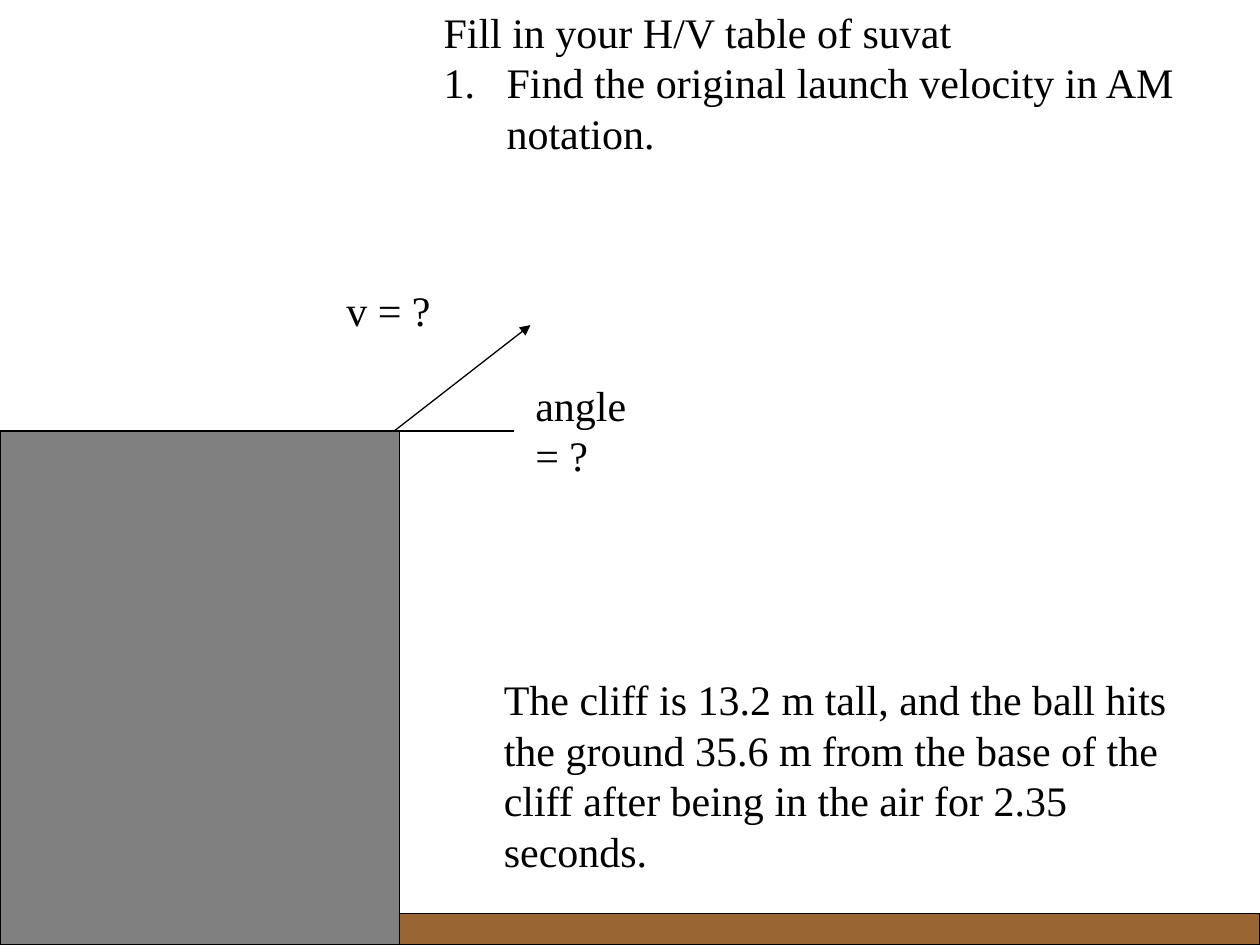
from pptx import Presentation
from pptx import util as u
from pptx.dml.color import RGBColor
from pptx.enum import shapes, text
from pptx.oxml.ns import qn
from lxml import etree

COLORS = {"ink": "000000", "ground": "996633", "cliff": "808080"}
FONT = "Times New Roman"
CLIFF_TOP = 3.42
CLIFF_EDGE = 3.17


def rgb(name):
    """Return the named colour."""
    return RGBColor.from_string(COLORS[name])


def style_line(line):
    """Apply the thin black outline."""
    line.color.rgb = rgb("ink")
    line.width = u.Pt(0.75)


def add_block(s, x, y, w, h, color):
    """Add a filled, outlined rectangle."""
    sp = s.shapes.add_shape(shapes.MSO_SHAPE.RECTANGLE, *map(u.Inches, (x, y, w, h)))
    sp.shadow.inherit = False
    sp.fill.solid()
    sp.fill.fore_color.rgb = rgb(color)
    style_line(sp.line)


def add_line(s, start, end, arrow=False):
    """Add a straight line, optionally with an arrowhead at its end."""
    sp = s.shapes.add_connector(
        shapes.MSO_CONNECTOR.STRAIGHT, *map(u.Inches, (*start, *end)))
    style_line(sp.line)
    if arrow:
        etree.SubElement(sp.line._get_or_add_ln(), qn("a:tailEnd"), type="triangle")
    etree.SubElement(sp._element.spPr, qn("a:effectLst"))


def bezier(points, steps=12):
    """Return points along a cubic curve, without its start."""
    def at(t):
        weights = ((1 - t) ** 3, 3 * t * (1 - t) ** 2, 3 * t * t * (1 - t), t ** 3)
        return tuple(sum(k * pt[i] for k, pt in zip(weights, points)) for i in (0, 1))
    return [at(n / steps) for n in range(1, steps + 1)]


def add_curve(s, *curves):
    """Add an open outline through joined cubic curves."""
    builder = s.shapes.build_freeform(*curves[0][0], scale=u.Inches(1))
    for curve in curves:
        builder.add_line_segments(bezier(curve), close=False)
    sp = builder.convert_to_shape()
    sp.shadow.inherit = False
    sp.fill.background()
    style_line(sp.line)


def add_run(p, words):
    """Add one run in the slide's text style."""
    r = p.add_run()
    r.text = words
    r.font.name = FONT
    r.font.size = u.Pt(24)
    r.font.color.rgb = rgb("ink")


def add_text(s, x, y, w, h, words, wrap=False):
    """Add a single-paragraph text box."""
    tf = s.shapes.add_textbox(*map(u.Inches, (x, y, w, h))).text_frame
    tf.word_wrap = wrap
    tf.auto_size = text.MSO_AUTO_SIZE.SHAPE_TO_FIT_TEXT
    add_run(tf.paragraphs[0], words)


def fill_tasks(sp, x, y, w, h, heading, tasks):
    """Place the body and fill it with a heading and numbered tasks."""
    sp.left, sp.top, sp.width, sp.height = map(u.Inches, (x, y, w, h))
    tf = sp.text_frame
    tf.auto_size = text.MSO_AUTO_SIZE.SHAPE_TO_FIT_TEXT
    for i, words in enumerate([heading, *tasks]):
        p = tf.add_paragraph() if i else tf.paragraphs[0]
        p.space_before = u.Pt(0)
        pPr = p._p.get_or_add_pPr()
        pPr.set("marL", str(u.Inches(0.5)))
        pPr.set("indent", str(u.Inches(-0.5)))
        if i:
            etree.SubElement(pPr, qn("a:buFont"), typeface=FONT)
            etree.SubElement(pPr, qn("a:buAutoNum"), type="arabicPeriod")
        else:
            etree.SubElement(pPr, qn("a:buNone"))
        add_run(p, words)


def main():
    """Build the projectile problem slide."""
    prs = Presentation()
    prs.slide_width, prs.slide_height = u.Inches(10), u.Inches(7.5)
    s = prs.slides.add_slide(prs.slide_layouts[1])
    title = s.shapes.title._element
    title.getparent().remove(title)

    add_block(s, 2.75, 7.25, 7.25, 0.25, "ground")
    add_block(s, 0, CLIFF_TOP, CLIFF_EDGE, 7.5 - CLIFF_TOP, "cliff")
    add_line(s, (3.13, CLIFF_TOP), (4.21, 2.58), arrow=True)
    add_curve(s,
              [(3.63, 3.08), (3.71, 3.14), (3.78, 3.19), (3.8, 3.25)],
              [(3.8, 3.25), (3.81, 3.31), (3.76, 3.36), (3.71, CLIFF_TOP)])
    fill_tasks(s.placeholders[1], 3.42, 0, 6.58, 1.3,
               "Fill in your H/V table of suvat",
               ["Find the original launch velocity in AM notation."])
    add_text(s, 3.9, 5.3, 5.85, 1.7,
             "The cliff is 13.2 m tall, and the ball hits the ground 35.6 m from "
             "the base of the cliff after being in the air for 2.35 seconds.",
             wrap=True)
    add_line(s, (CLIFF_EDGE, CLIFF_TOP), (4.08, CLIFF_TOP))
    add_text(s, 2.65, 2.21, 0.87, 0.5, "v = ?")
    add_text(s, 4.15, 2.96, 1.42, 0.5, "angle = ?")
    prs.save("out.pptx")


if __name__ == "__main__":
    main()
